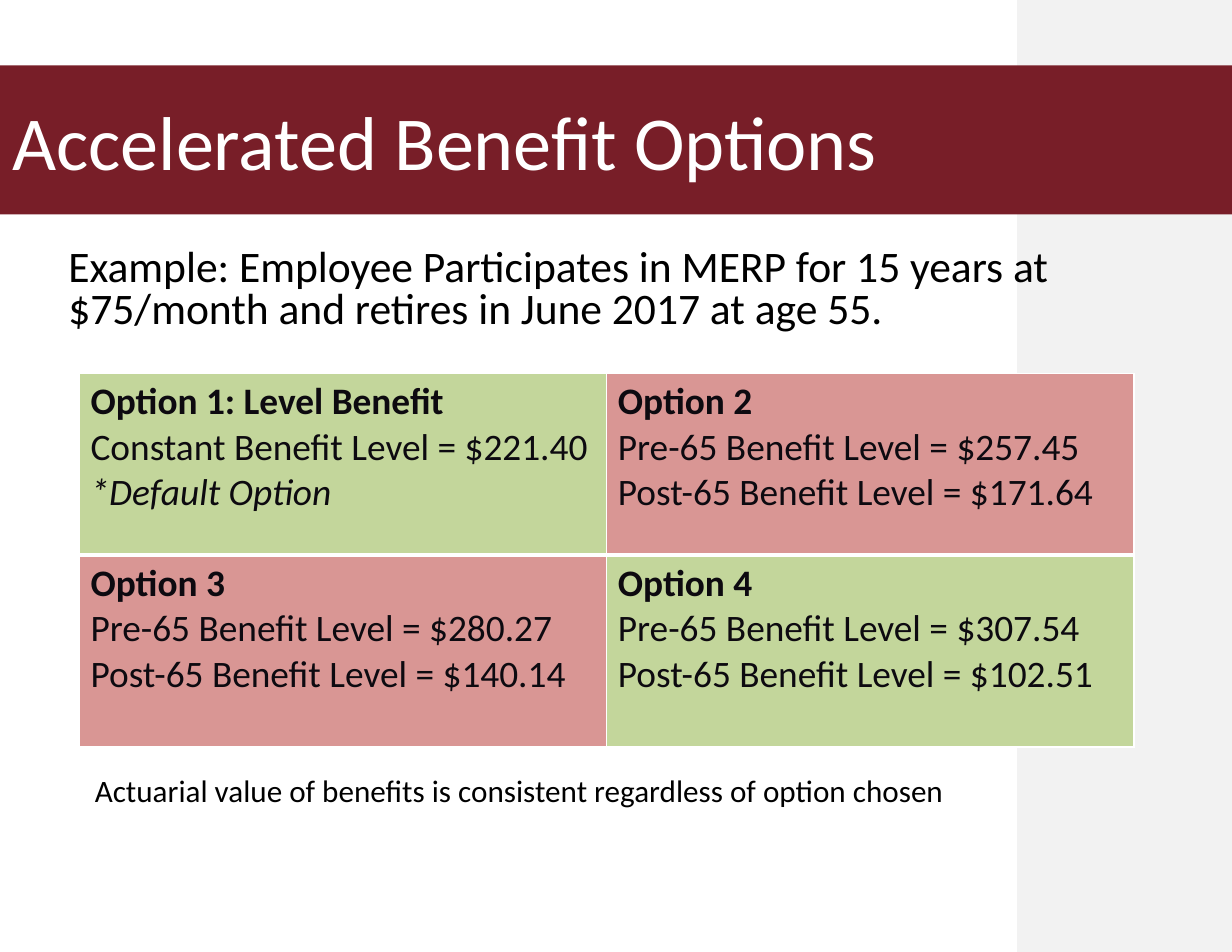
from collections import namedtuple
from dataclasses import dataclass

from lxml import etree
from pptx import Presentation
from pptx.dml.color import RGBColor
from pptx.enum.shapes import MSO_SHAPE
from pptx.enum.text import MSO_ANCHOR, MSO_AUTO_SIZE, PP_ALIGN
from pptx.oxml.ns import qn
from pptx.util import Cm, Pt

RECTANGLE = MSO_SHAPE.RECTANGLE
MIDDLE, TOP = MSO_ANCHOR.MIDDLE, MSO_ANCHOR.TOP
LEFT = PP_ALIGN.LEFT
NO_AUTOFIT = MSO_AUTO_SIZE.NONE

Box = namedtuple("Box", "left top width height")


@dataclass(frozen=True)
class Theme:
    font: str = "Calibri"
    banner: str = "781E28"
    panel: str = "F2F2F2"
    white: str = "FFFFFF"
    black: str = "000000"
    option_text: str = "0D0A10"
    green: str = "C3D69B"
    red: str = "D99694"
    title_size: int = 49
    example_size: int = 28
    option_size: int = 24
    note_size: int = 20


THEME = Theme()

FRAME_FORMAT = {
    "margin_left": Cm(0.28),
    "margin_right": Cm(0.28),
    "margin_top": Cm(0.15),
    "margin_bottom": Cm(0.15),
    "word_wrap": True,
    "auto_size": NO_AUTOFIT,
}

OPTIONS = [
    [
        ["Option 1: Level Benefit", "Constant Benefit Level = $221.40", "*Default Option"],
        ["Option 2", "Pre-65 Benefit Level = $257.45", "Post-65 Benefit Level = $171.64"],
    ],
    [
        ["Option 3", "Pre-65 Benefit Level = $280.27", "Post-65 Benefit Level = $140.14"],
        ["Option 4", "Pre-65 Benefit Level = $307.54", "Post-65 Benefit Level = $102.51"],
    ],
]


def apply(target, formats):
    for attribute, value in formats.items():
        setattr(target, attribute, value)


def paint(target, color):
    target.fill.solid()
    target.fill.fore_color.rgb = RGBColor.from_string(color)


def style_font(font, size, color, **formats):
    apply(font, {"name": THEME.font, "size": Pt(size), **formats})
    font.color.rgb = RGBColor.from_string(color)


def draw_side_panel(slide, box):
    panel = slide.shapes.add_shape(RECTANGLE, *box)
    panel.shadow.inherit = False
    paint(panel, THEME.panel)
    panel.line.fill.background()
    slide.shapes.title.element.addprevious(panel.element)


def draw_banner(slide, box, heading):
    banner = slide.shapes.title
    apply(banner, box._asdict())
    paint(banner, THEME.banner)
    apply(banner.text_frame, {**FRAME_FORMAT, "text": heading, "vertical_anchor": MIDDLE})
    paragraph = banner.text_frame.paragraphs[0]
    paragraph.alignment = LEFT
    style_font(paragraph.runs[0].font, THEME.title_size, THEME.white)


def draw_example(slide, box, sentence):
    example = slide.placeholders[1]
    apply(example, box._asdict())
    apply(example.text_frame, {**FRAME_FORMAT, "text": sentence, "vertical_anchor": TOP})
    paragraph = example.text_frame.paragraphs[0]
    properties = paragraph._p.get_or_add_pPr()
    properties.set("marL", "0")
    properties.set("indent", "0")
    etree.SubElement(properties, qn("a:buNone"))
    apply(paragraph, {"alignment": LEFT, "line_spacing": 0.8, "space_before": Pt(0)})
    style_font(paragraph.runs[0].font, THEME.example_size, THEME.black)


def set_borders(cell, widths):
    properties = cell._tc.get_or_add_tcPr()
    for position, (side, width) in enumerate(widths.items()):
        border = etree.Element(qn(f"a:ln{side}"), w=str(Pt(width)))
        fill = etree.SubElement(border, qn("a:solidFill"))
        etree.SubElement(fill, qn("a:srgbClr"), val=THEME.white)
        properties.insert(position, border)


def fill_option(cell, lines):
    cell.text = "\n".join(lines)
    for index, paragraph in enumerate(cell.text_frame.paragraphs):
        style_font(
            paragraph.runs[0].font,
            THEME.option_size,
            THEME.option_text,
            bold=index == 0,
            italic=lines[index].startswith("*"),
        )


def draw_options(slide, box, options):
    grid = slide.shapes.add_table(len(options), len(options[0]), *box).table
    apply(grid, {"first_row": False, "horz_banding": False})
    first_height = Cm(4.12)
    for row, height in zip(grid.rows, (first_height, box.height - first_height)):
        row.height = height
    for row_index, row_options in enumerate(options):
        for column_index, lines in enumerate(row_options):
            cell = grid.cell(row_index, column_index)
            fill_option(cell, lines)
            paint(cell, THEME.green if row_index == column_index else THEME.red)
            divider = 3
            set_borders(cell, {
                "L": 1,
                "R": 1,
                "T": divider if row_index else 1,
                "B": 1 if row_index else divider,
            })


def draw_note(slide, box, sentence):
    note = slide.shapes.add_textbox(*box).text_frame
    apply(note, {"word_wrap": True, "text": sentence})
    style_font(note.paragraphs[0].runs[0].font, THEME.note_size, THEME.black)


def main():
    deck = Presentation()
    apply(deck, {"slide_width": Cm(27.94), "slide_height": Cm(21.59)})
    slide = deck.slides.add_slide(deck.slide_layouts[1])
    panel_left = Cm(23.07)
    draw_side_panel(
        slide, Box(panel_left, 0, deck.slide_width - panel_left, deck.slide_height)
    )
    draw_banner(
        slide, Box(0, Cm(1.48), deck.slide_width, Cm(3.38)), "Accelerated Benefit Options"
    )
    draw_example(
        slide,
        Box(Cm(1.27), Cm(5.5), Cm(24.98), Cm(11.85)),
        "Example: Employee Participates in MERP for 15 years at $75/month "
        "and retires in June 2017 at age 55.",
    )
    draw_options(slide, Box(Cm(1.8), Cm(8.47), Cm(23.92), Cm(8.47)), OPTIONS)
    draw_note(
        slide,
        Box(Cm(1.9), Cm(17.36), Cm(21.8), Cm(1.11)),
        "Actuarial value of benefits is consistent regardless of option chosen",
    )
    deck.save("out.pptx")


if __name__ == "__main__":
    main()
